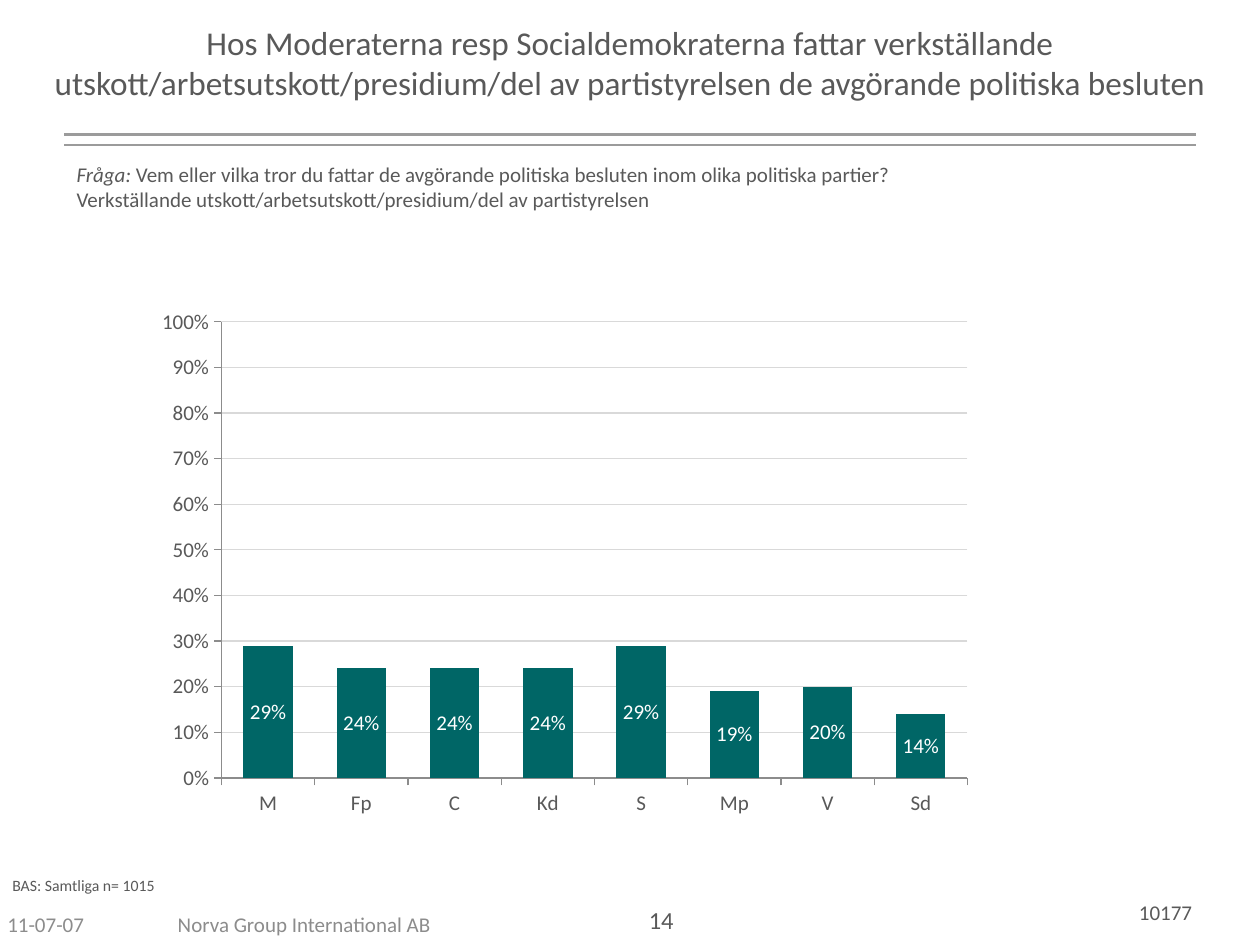
import pptx
import pptx.chart.data
import pptx.dml.color
import pptx.enum.chart
import pptx.enum.shapes
import pptx.enum.text
import pptx.oxml
import pptx.oxml.ns
import pptx.util
from lxml import etree

Pt = pptx.util.Pt
RGBColor = pptx.dml.color.RGBColor
PP_ALIGN = pptx.enum.text.PP_ALIGN
MSO_ANCHOR = pptx.enum.text.MSO_ANCHOR

TEXT = RGBColor(0x59, 0x59, 0x59)
MUTED = RGBColor(0x8C, 0x8C, 0x8C)
RULE = RGBColor(0x9B, 0x9B, 0x9B)
GRID = RGBColor(0xD9, 0xD9, 0xD9)
TEAL = RGBColor(0x00, 0x66, 0x66)
WHITE = RGBColor(0xFF, 0xFF, 0xFF)

PARTIES = ["M", "Fp", "C", "Kd", "S", "Mp", "V", "Sd"]
SHARES = [0.29, 0.24, 0.24, 0.24, 0.29, 0.19, 0.2, 0.14]


class Deck:
    """Holds the style and the current slide."""
    font = "Calibri"

    def __init__(self, width, height):
        self.prs = pptx.Presentation()
        self.prs.slide_width, self.prs.slide_height = Pt(width), Pt(height)
        self.s = self.prs.slides.add_slide(self.prs.slide_layouts[6])

    def set_font(self, font, size, color, italic=None):
        font.name, font.size, font.italic = self.font, Pt(size), italic
        font.color.rgb = color

    def text(self, x, y, w, h, paragraphs, size=12, color=TEXT,
             align=PP_ALIGN.LEFT, anchor=MSO_ANCHOR.TOP):
        """Each paragraph is a list of (text, italic) runs."""
        tf = self.s.shapes.add_textbox(Pt(x), Pt(y), Pt(w), Pt(h)).text_frame
        tf.word_wrap = True
        tf.vertical_anchor = anchor
        for i, runs in enumerate(paragraphs):
            p = tf.add_paragraph() if i else tf.paragraphs[0]
            p.alignment = align
            for text, italic in runs:
                r = p.add_run()
                r.text = text
                self.set_font(r.font, size, color, italic)

    def rule(self, x1, x2, y):
        line = self.s.shapes.add_connector(
            pptx.enum.shapes.MSO_CONNECTOR.STRAIGHT, Pt(x1), Pt(y), Pt(x2), Pt(y))
        line.line.color.rgb, line.line.width = RULE, Pt(1.5)
        etree.SubElement(line._element.spPr, pptx.oxml.ns.qn("a:effectLst"))

    def column_chart(self, x, y, w, h, categories, values, plot):
        data = pptx.chart.data.CategoryChartData(number_format="0%")
        data.categories = categories
        data.add_series("Series 1", values)
        chart = self.s.shapes.add_chart(
            pptx.enum.chart.XL_CHART_TYPE.COLUMN_STACKED,
            Pt(x), Pt(y), Pt(w), Pt(h), data).chart
        chart.has_legend = chart.has_title = False
        self.set_font(chart.font, 18, TEXT)

        for axis in (chart.category_axis, chart.value_axis):
            self.set_font(axis.tick_labels.font, 12, TEXT)
            axis.major_tick_mark = pptx.enum.chart.XL_TICK_MARK.OUTSIDE
            axis.format.line.color.rgb = MUTED
            axis.format.line.width = Pt(0.75)
        axis = chart.value_axis
        axis.minimum_scale, axis.maximum_scale, axis.major_unit = 0, 1, 0.1
        axis.tick_labels.number_format = "0%"
        axis.tick_labels.number_format_is_linked = False
        axis.major_gridlines.format.line.color.rgb = GRID
        axis.major_gridlines.format.line.width = Pt(0.75)

        bars = chart.plots[0]
        bars.gap_width, bars.overlap, bars.vary_by_categories = 89, 100, False
        fill = bars.series[0].format.fill
        fill.solid()
        fill.fore_color.rgb = TEAL
        labels = bars.series[0].data_labels
        labels.show_value = True
        labels.number_format, labels.number_format_is_linked = "0%", False
        labels.position = pptx.enum.chart.XL_LABEL_POSITION.CENTER
        self.set_font(labels.font, 12, WHITE)

        # Fixed inner plot area, as fractions of the chart
        area = chart._chartSpace.chart.plotArea
        for old in area.findall(pptx.oxml.ns.qn("c:layout")):
            area.remove(old)
        settings = [("layoutTarget", "inner"), ("xMode", "edge"), ("yMode", "edge")]
        settings += zip("xywh", plot)
        items = "".join(f'<c:{tag} val="{val}"/>' for tag, val in settings)
        area.insert(0, pptx.oxml.parse_xml(
            f'<c:layout {pptx.oxml.ns.nsdecls("c")}>'
            f'<c:manualLayout>{items}</c:manualLayout></c:layout>'))


def main():
    deck = Deck(720, 540)
    center, middle = PP_ALIGN.CENTER, MSO_ANCHOR.MIDDLE

    # Title and double rule
    deck.text(0, 9.4, 720, 73.4, [[(
        "Hos Moderaterna resp Socialdemokraterna fattar verkställande "
        "utskott/arbetsutskott/presidium/del av partistyrelsen "
        "de avgörande politiska besluten", None)]], size=19, align=center)
    for y in (77, 82.8):
        deck.rule(36.7, 683.3, y)

    # Survey question
    deck.text(36.7, 88.6, 646.6, 36, [
        [("Fråga: ", True),
         ("Vem eller vilka tror du fattar de avgörande politiska besluten "
          "inom olika politiska partier?", False)],
        [("Verkställande utskott/arbetsutskott/presidium/del av partistyrelsen",
          False)]])

    # Share per party
    deck.column_chart(87.8, 133.9, 553.7, 357.1, PARTIES, SHARES,
                      plot=(0.07, 0.14, 0.77, 0.73))

    # Base and footer
    deck.text(0, 496.8, 244, 18, [[("BAS: Samtliga n= 1015", None)]], size=9)
    deck.text(-2.9, 513.4, 168, 28.8, [[("11-07-07", None)]],
              color=MUTED, anchor=middle)
    deck.text(59.8, 513.4, 228, 28.8, [[("Norva Group International AB", None)]],
              color=MUTED, align=center, anchor=middle)
    deck.text(293.8, 513.4, 168, 28.8, [[("14", None)]], size=14, align=center)
    deck.text(501.1, 510.5, 187.2, 21.6, [[("10177", None)]],
              align=PP_ALIGN.RIGHT)

    deck.prs.save("out.pptx")


if __name__ == "__main__":
    main()
